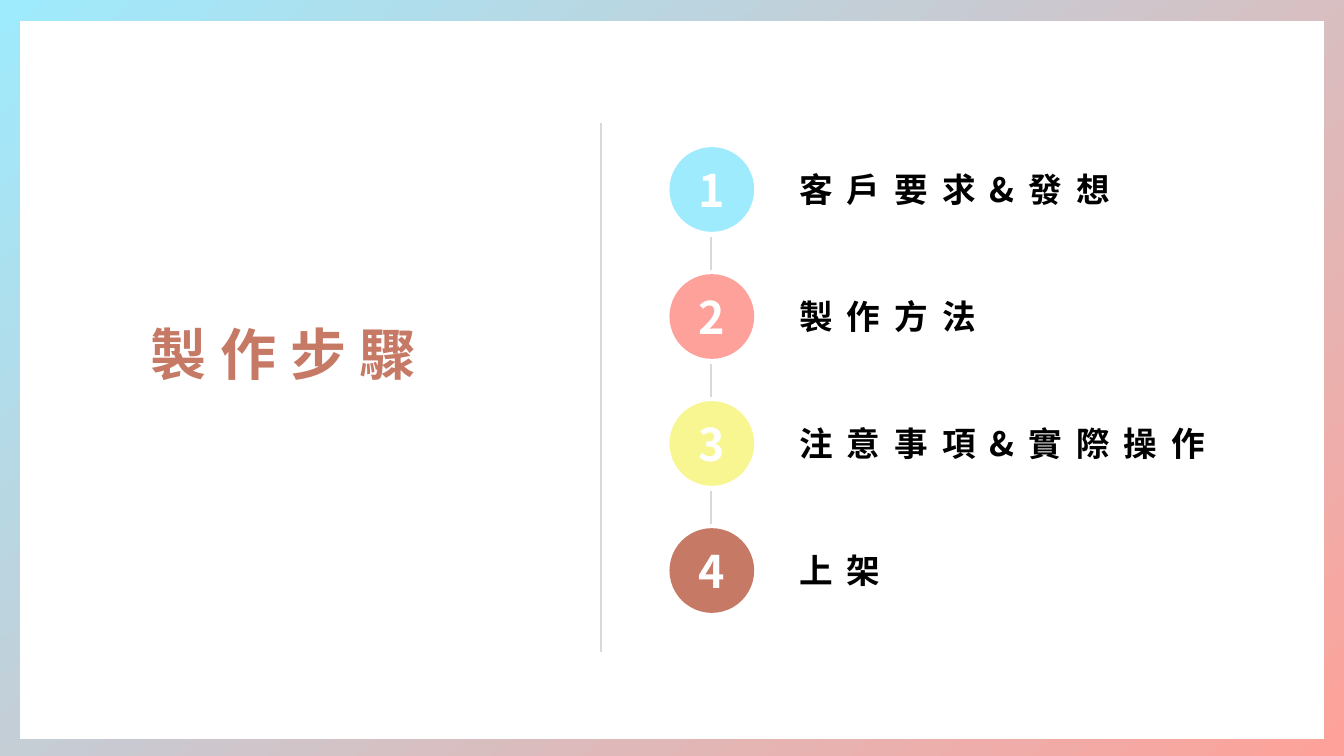
from pptx import Presentation
from pptx.dml.color import RGBColor as Rgb
from pptx.enum.shapes import MSO_CONNECTOR as Link, MSO_SHAPE as Kind
from pptx.enum.text import MSO_ANCHOR as Anchor, MSO_AUTO_SIZE as Fit, PP_ALIGN as Align
from pptx.oxml.ns import qn
from pptx.util import Inches, Pt
from lxml.etree import SubElement

FONT = "Noto Sans CJK SC"
COLORS = {
    "sky": "9EEBFD",
    "coral": "FEA19A",
    "lemon": "F8F691",
    "clay": "C67965",
    "white": "FFFFFF",
    "black": "000000",
    "gray": "D9D9D9",
}
STEPS = [
    ("客戶要求&發想", "sky"),
    ("製作方法", "coral"),
    ("注意事項&實際操作", "lemon"),
    ("上架", "clay"),
]
TOP, PITCH, SIZE = 1.46, 1.26, 0.84
LEFT = 6.64


def tint(name):
    return Rgb.from_string(COLORS[name])


def write(shape, text, size=24, color="black", align=Align.LEFT, gap=0, inset=0.1):
    frame = shape.text_frame
    frame.auto_size = Fit.NONE
    frame.word_wrap = True
    frame.vertical_anchor = Anchor.MIDDLE
    frame.margin_left = frame.margin_right = Inches(inset)
    frame.margin_top = frame.margin_bottom = Inches(0)
    para = frame.paragraphs[0]
    para.alignment = align
    run = para.add_run()
    run.text = text
    font = run.font
    font.name, font.size, font.bold = FONT, Pt(size), True
    font.color.rgb = tint(color)
    props = run._r.get_or_add_rPr()
    SubElement(props, qn("a:ea")).set("typeface", FONT)
    if gap:
        props.set("spc", str(gap * 100))


def add_block(slide, kind, color, x, y, w, h):
    block = slide.shapes.add_shape(kind, Inches(x), Inches(y), Inches(w), Inches(h))
    block.shadow.inherit = False
    block.fill.solid()
    block.fill.fore_color.rgb = tint(color)
    block.line.fill.background()
    return block


def add_rule(slide, x, top, end):
    rule = slide.shapes.add_connector(
        Link.STRAIGHT, Inches(x), Inches(top), Inches(x), Inches(end))
    rule.line.color.rgb = tint("gray")
    rule.line.width = Pt(1.5)
    SubElement(rule._element.spPr, qn("a:effectLst"))


def add_label(slide, text, y):
    label = slide.shapes.add_textbox(Inches(7.83), Inches(y), Inches(5), Inches(0.5))
    write(label, text, gap=10)


def add_step(slide, index, text, color):
    top = TOP + index * PITCH
    disc = add_block(slide, Kind.OVAL, color, LEFT, top, SIZE, SIZE)
    write(disc, str(index + 1), size=32, color="white", align=Align.CENTER, inset=0)
    add_label(slide, text, top + 0.17)
    if index < len(STEPS) - 1:
        add_rule(slide, 7.05, top + 0.89, top + 1.22)


def set_title(slide, text):
    title = slide.shapes.title
    title.left, title.top = Inches(1.39), Inches(3.12)
    title.width, title.height = Inches(3.2), Inches(0.77)
    write(title, text, size=40, color="clay", gap=10)


def set_back(slide):
    fill = slide.background.fill
    fill.gradient()
    fill.gradient_angle = 310
    for stop, name in zip(fill.gradient_stops, ("sky", "coral")):
        stop.color.rgb = tint(name)


def main():
    deck = Presentation()
    deck.slide_width, deck.slide_height = Inches(13.33), Inches(7.5)
    slide = deck.slides.add_slide(deck.slide_layouts[5])
    set_back(slide)
    panel = add_block(slide, Kind.RECTANGLE, "white", 0.2, 0.21, 12.93, 7.12)
    slide.shapes.title._element.addprevious(panel._element)
    set_title(slide, "製作步驟")
    add_rule(slide, 5.96, 1.22, 6.47)
    for index, (text, color) in enumerate(STEPS):
        add_step(slide, index, text, color)
    deck.save("out.pptx")


if __name__ == "__main__":
    main()
